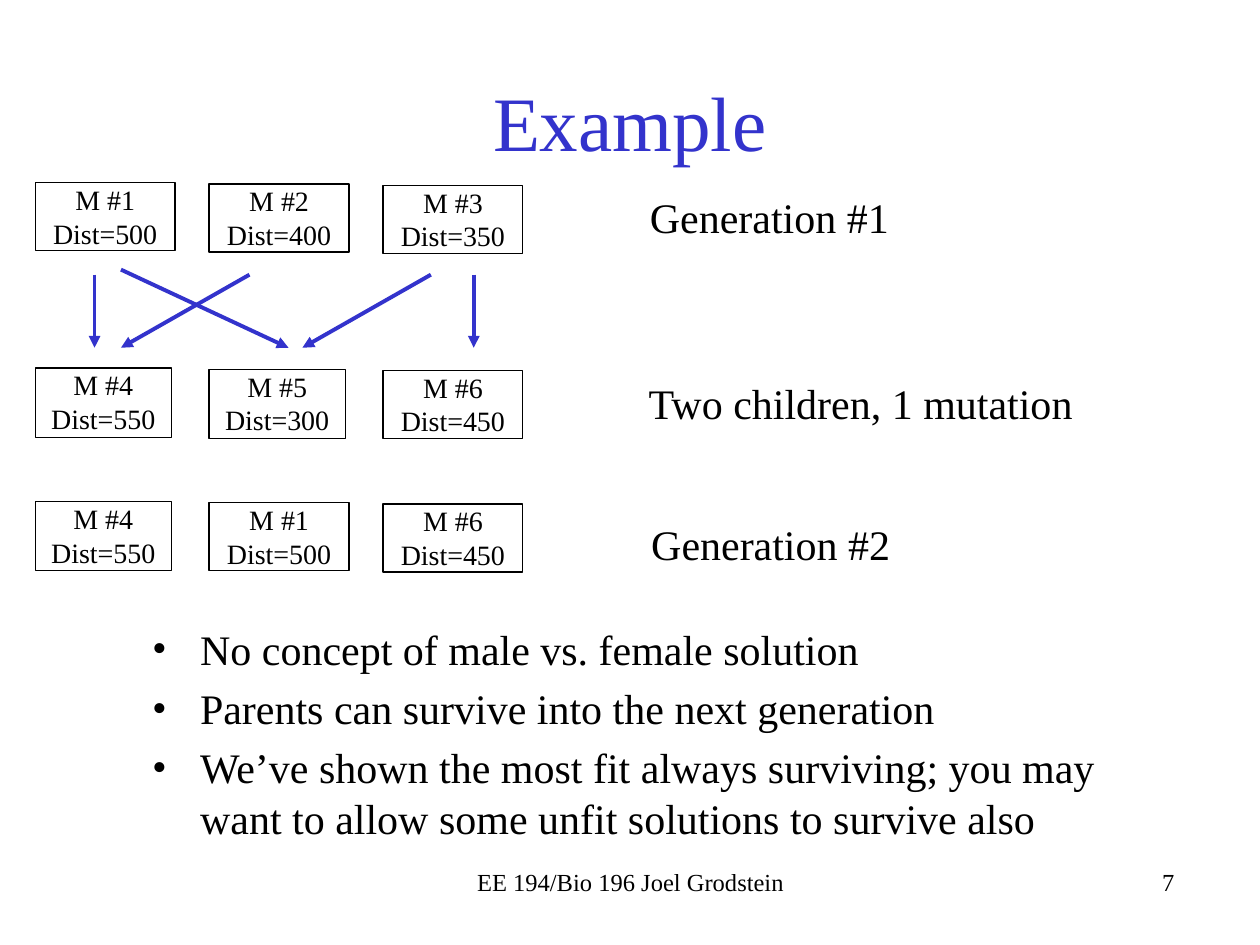
import pptx
import pptx.dml.color
import pptx.enum.shapes
import pptx.enum.text
import pptx.oxml
import pptx.oxml.ns
import pptx.util
from pptx.util import Inches

COLORS = {"text": "000000", "accent": "3333CC"}
FONT = "Times New Roman"
ALIGN = pptx.enum.text.PP_ALIGN
ANCHOR = pptx.enum.text.MSO_ANCHOR
AUTO_SIZE = pptx.enum.text.MSO_AUTO_SIZE


def color(name):
    return pptx.dml.color.RGBColor.from_string(COLORS[name])


def drawing_element(tag, attributes=""):
    namespace = pptx.oxml.ns.nsdecls("a")
    return pptx.oxml.parse_xml(f"<a:{tag} {namespace} {attributes}/>")


class SlideBuilder:
    def __init__(self, slide):
        self.slide = slide

    def fill_text(self, frame, lines, size, align=ALIGN.LEFT, color_name="text"):
        frame.word_wrap = True
        for index, line in enumerate(lines):
            paragraph = frame.add_paragraph() if index else frame.paragraphs[0]
            paragraph.alignment = align
            run = paragraph.add_run()
            run.text = line
            run.font.name = FONT
            run.font.size = pptx.util.Pt(size)
            run.font.color.rgb = color(color_name)

    def title(self, text, left, top, width, height):
        shape = self.slide.shapes.title
        shape.left, shape.top = Inches(left), Inches(top)
        shape.width, shape.height = Inches(width), Inches(height)
        shape.text_frame.vertical_anchor = ANCHOR.MIDDLE
        self.fill_text(shape.text_frame, [text], 44, ALIGN.CENTER, "accent")

    def text(self, lines, left, top, width, height, size, align=ALIGN.LEFT):
        shape = self.slide.shapes.add_textbox(
            Inches(left), Inches(top), Inches(width), Inches(height))
        self.fill_text(shape.text_frame, lines, size, align)
        return shape

    def bullets(self, lines, left, top, width, height):
        shape = self.text(lines, left, top, width, height, 24)
        for paragraph in shape.text_frame.paragraphs:
            paragraph.space_before = pptx.util.Pt(5)
            properties = paragraph._p.get_or_add_pPr()
            properties.set("marL", str(Inches(0.38)))
            properties.set("indent", str(Inches(-0.38)))
            properties.append(drawing_element("buFont", f'typeface="{FONT}"'))
            properties.append(drawing_element("buChar", 'char="•"'))

    def solution(self, name, distance, left, top, width, height):
        shape = self.slide.shapes.add_shape(
            pptx.enum.shapes.MSO_SHAPE.RECTANGLE,
            Inches(left), Inches(top), Inches(width), Inches(height))
        shape.shadow.inherit = False
        shape.fill.background()
        shape.line.color.rgb = color("text")
        shape.line.width = pptx.util.Pt(0.75)
        frame = shape.text_frame
        frame.margin_left = frame.margin_right = 0
        frame.margin_top = frame.margin_bottom = 0
        frame.vertical_anchor = ANCHOR.TOP
        frame.auto_size = AUTO_SIZE.SHAPE_TO_FIT_TEXT
        self.fill_text(frame, [name, f"Dist={distance}"], 16, ALIGN.CENTER)

    def arrow(self, start_x, start_y, end_x, end_y):
        connector = self.slide.shapes.add_connector(
            pptx.enum.shapes.MSO_CONNECTOR.STRAIGHT,
            Inches(start_x), Inches(start_y), Inches(end_x), Inches(end_y))
        connector.line.color.rgb = color("accent")
        connector.line.width = pptx.util.Pt(2.25)
        connector.line._get_or_add_ln().append(
            drawing_element("tailEnd", 'type="triangle"'))
        connector._element.spPr.append(drawing_element("effectLst"))


def main():
    presentation = pptx.Presentation()
    presentation.slide_width = Inches(10)
    presentation.slide_height = Inches(7.5)
    slide = presentation.slides.add_slide(presentation.slide_layouts[5])
    builder = SlideBuilder(slide)

    builder.title("Example", 0.75, 0.33, 8.5, 1.25)

    wide, narrow = (1.11, 0.54), (1.08, 0.55)
    generations = [
        (1.45, [("M #1", 500, wide), ("M #2", 400, wide), ("M #3", 350, wide)]),
        (2.92, [("M #4", 550, narrow), ("M #5", 300, narrow), ("M #6", 450, wide)]),
        (3.98, [("M #4", 550, narrow), ("M #1", 500, wide), ("M #6", 450, wide)]),
    ]
    for top, solutions in generations:
        for column, (name, distance, size) in enumerate(solutions):
            builder.solution(
                name, distance, 0.28 + 1.38 * column, top + 0.01 * column, *size)

    for start_x, start_y, end_x in [
        (0.75, 2.18, 0.75),
        (1.98, 2.18, 0.96),
        (0.96, 2.14, 2.29),
        (3.42, 2.18, 2.4),
        (3.76, 2.18, 3.76),
    ]:
        builder.arrow(start_x, start_y, end_x, 2.76)

    for label, left, top, width in [
        ("Generation #1", 5.06, 1.47, 2.24),
        ("Two children, 1 mutation", 5.05, 2.95, 3.82),
        ("Generation #2", 5.07, 4.07, 2.24),
    ]:
        builder.text([label], left, top, width, 0.5, 24)

    builder.bullets([
        "No concept of male vs. female solution",
        "Parents can survive into the next generation",
        "We’ve shown the most fit always surviving; you may want to allow "
        "some unfit solutions to survive also",
    ], 1.11, 4.9, 8.14, 1.88)

    builder.text(["EE 194/Bio 196 Joel Grodstein"],
                 3.42, 6.83, 3.17, 0.5, 14, ALIGN.CENTER)
    builder.text(["7"], 6.25, 6.83, 3.17, 0.5, 14, ALIGN.RIGHT)

    presentation.save("out.pptx")


if __name__ == "__main__":
    main()
